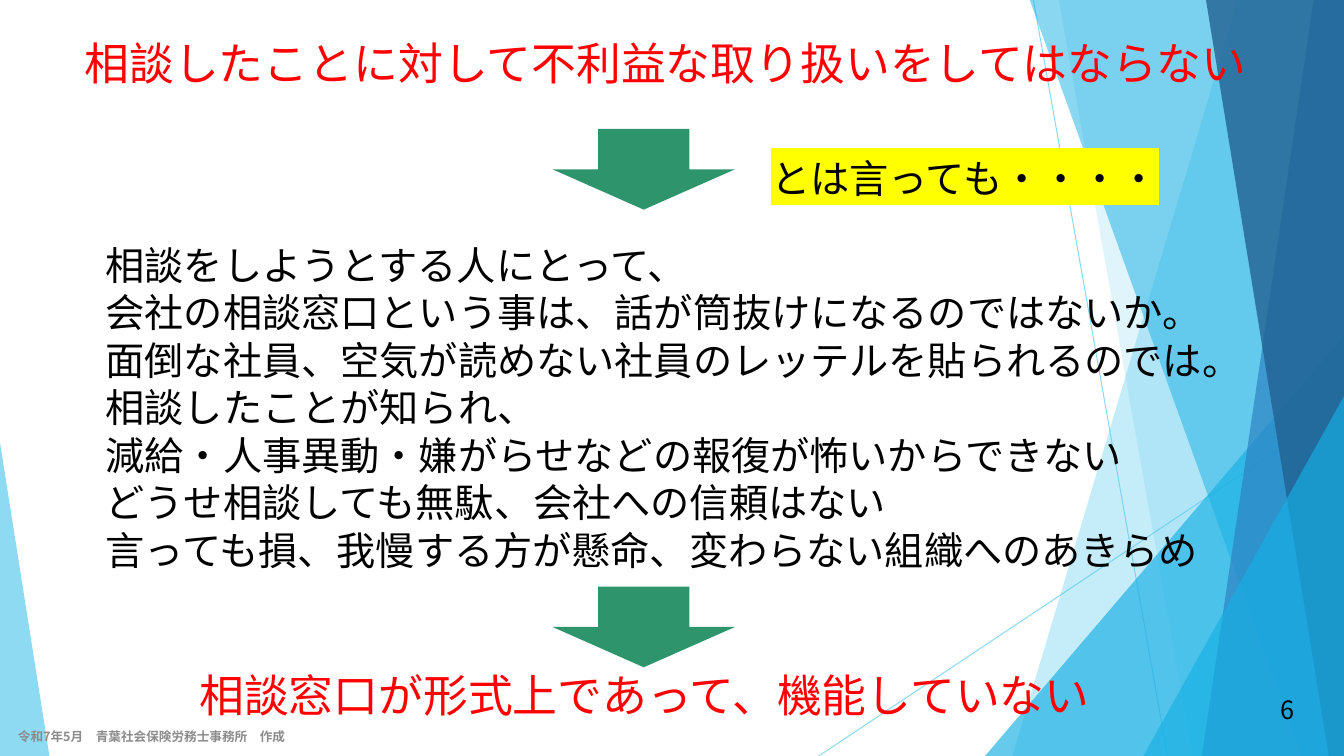
import lxml.etree
import pptx
import pptx.dml.color
import pptx.enum.shapes
import pptx.enum.text
import pptx.oxml.ns
import pptx.util

Inches, Pt = pptx.util.Inches, pptx.util.Pt
KIND = pptx.enum.shapes.MSO_SHAPE
ALIGN = pptx.enum.text.PP_ALIGN
MIDDLE = pptx.enum.text.MSO_ANCHOR.MIDDLE
qn = pptx.oxml.ns.qn

FONT = "Noto Sans CJK JP"
WIDE, HIGH, TOP = 13.33, 7.5, -0.01
HEX = {"sky": "5FCBEF", "cyan": "17B0E4", "blue": "2E83C3", "navy": "226292",
       "green": "2E946B", "red": "FF0000", "black": "000000",
       "gray": "8C8C8C", "yellow": "FFFF00"}

# Backdrop bands: top left x, bottom left x, colour, opacity
BANDS = {
    "under": [(12.28, 10.04, "sky", 36), (10.5, 11.83, "sky", 20)],
    "over": [(10.21, 12.91, "cyan", 50), (13.03, 11.92, "blue", 70),
             (11.96, 13.18, "navy", 80)],
}
WORRIES = [
    "相談をしようとする人にとって、",
    "会社の相談窓口という事は、話が筒抜けになるのではないか。",
    "面倒な社員、空気が読めない社員のレッテルを貼られるのでは。",
    "相談したことが知られ、",
    "減給・人事異動・嫌がらせなどの報復が怖いからできない",
    "どうせ相談しても無駄、会社への信頼はない",
    "言っても損、我慢する方が懸命、変わらない組織へのあきらめ",
]


def rgb(name):
    return pptx.dml.color.RGBColor.from_string(HEX[name])


def fade(shape, alpha):
    for color in shape._element.spPr.iter(qn("a:srgbClr")):
        lxml.etree.SubElement(color, qn("a:alpha"), val=str(alpha * 1000))


def paint(shape, color, alpha=100):
    shape.shadow.inherit = False
    shape.fill.solid()
    shape.fill.fore_color.rgb = rgb(color)
    shape.line.fill.background()
    if alpha < 100:
        fade(shape, alpha)


def add_line(slide, *ends):
    line = slide.shapes.add_connector(
        pptx.enum.shapes.MSO_CONNECTOR.STRAIGHT, *map(Inches, ends))
    line.line.color.rgb = rgb("sky")
    line.line.width = Pt(0.75)
    fade(line, 70)
    lxml.etree.SubElement(line._element.spPr, qn("a:effectLst"))


def add_band(slide, top, foot, color, alpha):
    points = [(top, TOP), (WIDE, TOP), (WIDE, HIGH), (foot, HIGH)]
    points = [(Inches(x), Inches(y)) for x, y in points]
    pen = slide.shapes.build_freeform(*points[0])
    pen.add_line_segments(points[1:], close=True)
    paint(pen.convert_to_shape(), color, alpha)


def add_wedge(slide, box, apex, color, alpha):
    wedge = slide.shapes.add_shape(KIND.ISOSCELES_TRIANGLE, *map(Inches, box))
    wedge.adjustments[0] = apex
    paint(wedge, color, alpha)


def add_arrow(slide, top):
    box = map(Inches, (5.48, top, 1.81, 0.8))
    paint(slide.shapes.add_shape(KIND.DOWN_ARROW, *box), "green")


def add_text(slide, box, lines, size, color="black", bold=False,
             align=ALIGN.LEFT, middle=False, mark=None):
    frame = slide.shapes.add_textbox(*map(Inches, box)).text_frame
    frame.word_wrap = True
    if middle:
        frame.vertical_anchor = MIDDLE
    else:
        frame.margin_top = Inches(0.08)
    style = {"name": FONT, "size": Pt(size), "bold": bold}
    for i, line in enumerate(lines):
        para = frame.add_paragraph() if i else frame.paragraphs[0]
        para.alignment = align
        if not middle:
            para.line_spacing = Pt(round(size * 1.21, 1))
        run = para.add_run()
        run.text = line
        for key, value in style.items():
            setattr(run.font, key, value)
        run.font.color.rgb = rgb(color)
        props = run._r.get_or_add_rPr()
        lxml.etree.SubElement(props, qn("a:ea"), typeface=FONT)
        if mark:
            light = lxml.etree.Element(qn("a:highlight"))
            lxml.etree.SubElement(light, qn("a:srgbClr"), val=HEX[mark])
            props.find(qn("a:solidFill")).addnext(light)


def add_back(slide):
    add_line(slide, 10.25, 0, 11.58, HIGH)
    add_line(slide, WIDE, 4.03, 8.12, HIGH)
    for band in BANDS["under"]:
        add_band(slide, *band)
    add_wedge(slide, (9.77, 3.33, 3.56, 4.17), 1, "cyan", 66)
    for band in BANDS["over"]:
        add_band(slide, *band)
    add_wedge(slide, (11.34, 3.93, 1.99, 3.57), 1, "cyan", 66)
    add_wedge(slide, (0, 4.39, 0.49, 3.11), 0, "sky", 70)


def main():
    deck = pptx.Presentation()
    deck.slide_width, deck.slide_height = Inches(WIDE), Inches(HIGH)
    slide = deck.slides.add_slide(deck.slide_layouts[6])
    add_back(slide)

    # Heading and page number
    add_text(slide, (0.74, 0.27, 12.44, 6.91),
             ["相談したことに対して不利益な取り扱いをしてはならない"], 32, "red")
    add_text(slide, (12.19, 6.84, 0.75, 0.4), ["6"], 18,
             align=ALIGN.RIGHT, middle=True)

    # Worries that hold people back
    add_arrow(slide, 1.28)
    add_text(slide, (7.55, 1.45, 4.82, 0.57), ["とは言っても・・・・"], 28,
             mark="yellow")
    add_text(slide, (0.95, 2.31, 11.98, 3.4), WORRIES, 28)

    # Outcome and footer
    add_text(slide, (0.96, 6.54, 10.87, 0.64),
             ["相談窓口が形式上であって、機能していない"], 32, "red",
             align=ALIGN.CENTER)
    add_arrow(slide, 5.82)
    add_text(slide, (0.08, 7.12, 6.87, 0.38),
             ["令和7年5月　青葉社会保険労務士事務所　作成"], 9, "gray",
             bold=True, middle=True)
    deck.save("out.pptx")


if __name__ == "__main__":
    main()
